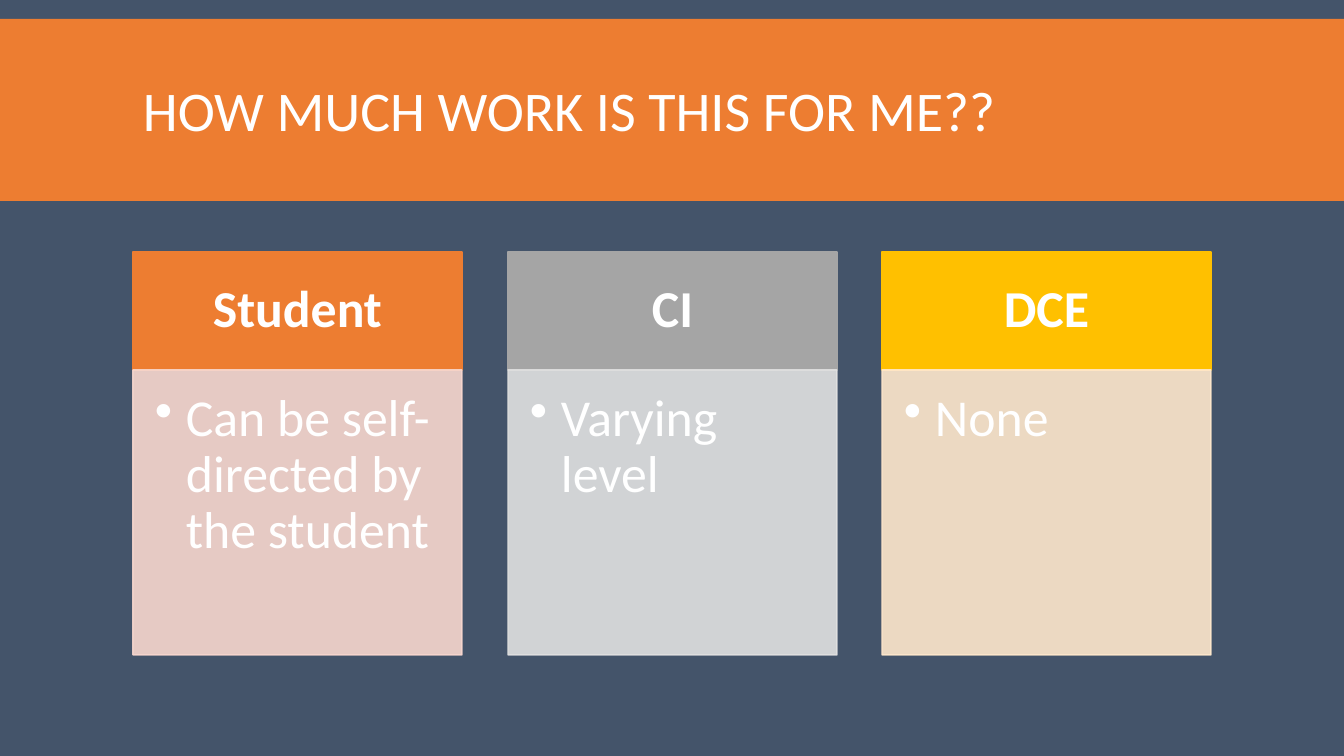
import pptx
import pptx.dml.color
import pptx.enum.shapes
import pptx.enum.text
import pptx.oxml.ns
import pptx.util
from lxml import etree

WIDTH, HEIGHT = 1344, 756
SCALE = 12192000 / WIDTH
COLORS = {
    "background": "44546A",
    "text": "FFFFFF",
    "orange": "ED7D31",
    "gray": "A5A5A5",
    "gold": "FFC000",
    "pale orange": "F8D7CE",
    "pale gray": "E1E1E1",
    "pale gold": "FFE8CC",
}
COLUMNS = [
    ("Student", "Can be self-directed by the student", "orange"),
    ("CI", "Varying level", "gray"),
    ("DCE", "None", "gold"),
]
COLUMN_LEFT, COLUMN_RIGHT, COLUMN_WIDTH = 133, 1211, 329
HEADING_TOP, HEADING_HEIGHT, BODY_HEIGHT = 252, 118, 285


def emu(px):
    return round(px * SCALE)


def rgb(name):
    return pptx.dml.color.RGBColor.from_string(COLORS[name])


class SlideBuilder:
    font = "Calibri"

    def __init__(self, presentation):
        self.slide = presentation.slides.add_slide(presentation.slide_layouts[6])
        fill = self.slide.background.fill
        fill.solid()
        fill.fore_color.rgb = rgb("background")

    def box(self, left, top, width, height, color, outlined=True, opacity=100):
        shape = self.slide.shapes.add_shape(
            pptx.enum.shapes.MSO_SHAPE.RECTANGLE,
            emu(left), emu(top), emu(width), emu(height))
        shape.shadow.inherit = False
        fills = [shape.fill]
        if outlined:
            shape.line.width = pptx.util.Pt(1)
            fills.append(shape.line.fill)
        else:
            shape.line.fill.background()
        for fill in fills:
            fill.solid()
            fill.fore_color.rgb = rgb(color)
        if opacity < 100:
            for element in shape._element.spPr.iter(pptx.oxml.ns.qn("a:srgbClr")):
                etree.SubElement(element, pptx.oxml.ns.qn("a:alpha"), val=str(opacity * 1000))
        return shape

    def set_text(self, shape, text, size, insets, spacing, anchor="MIDDLE", align="LEFT", bold=False):
        frame = shape.text_frame
        frame.word_wrap = True
        frame.vertical_anchor = pptx.enum.text.MSO_ANCHOR[anchor]
        frame.margin_left, frame.margin_top, frame.margin_right, frame.margin_bottom = map(emu, insets)
        paragraph = frame.paragraphs[0]
        paragraph.text = text
        paragraph.alignment = pptx.enum.text.PP_ALIGN[align]
        paragraph.line_spacing = spacing
        paragraph.font.name = self.font
        paragraph.font.size = pptx.util.Pt(size)
        paragraph.font.bold = bold
        paragraph.font.color.rgb = rgb("text")
        return paragraph

    def title(self, text, left, top, width, height):
        shape = self.slide.shapes.add_textbox(emu(left), emu(top), emu(width), emu(height))
        self.set_text(shape, text, 40, (10, 5, 10, 5), 0.85)

    def heading(self, text, left, top, width, height, color):
        shape = self.box(left, top, width, height, color)
        self.set_text(shape, text, 37, (29, 16, 29, 16), 0.9, align="CENTER", bold=True)

    def bullet_panel(self, text, left, top, width, height, color):
        shape = self.box(left, top, width, height, color, opacity=90)
        paragraph = self.set_text(shape, text, 37, (22, 22, 29, 32), 0.9, anchor="TOP")
        properties = paragraph._p.get_or_add_pPr()
        properties.set("marL", str(emu(31)))
        properties.set("indent", str(emu(-31)))
        bullet = etree.Element(pptx.oxml.ns.qn("a:buChar"), char="•")
        properties.find(pptx.oxml.ns.qn("a:lnSpc")).addnext(bullet)


def main():
    presentation = pptx.Presentation()
    presentation.slide_width = emu(WIDTH)
    presentation.slide_height = emu(HEIGHT)
    builder = SlideBuilder(presentation)
    builder.box(0, 19, WIDTH, 182, "orange", outlined=False)
    builder.title("HOW MUCH WORK IS THIS FOR ME??", 133, 31, 1180, 166)
    pitch = (COLUMN_RIGHT - COLUMN_LEFT - COLUMN_WIDTH) / (len(COLUMNS) - 1)
    for index, (heading, body, color) in enumerate(COLUMNS):
        left = round(COLUMN_LEFT + index * pitch)
        builder.heading(heading, left, HEADING_TOP, COLUMN_WIDTH, HEADING_HEIGHT, color)
        builder.bullet_panel(body, left, HEADING_TOP + HEADING_HEIGHT,
                             COLUMN_WIDTH, BODY_HEIGHT, f"pale {color}")
    presentation.save("out.pptx")


if __name__ == "__main__":
    main()
